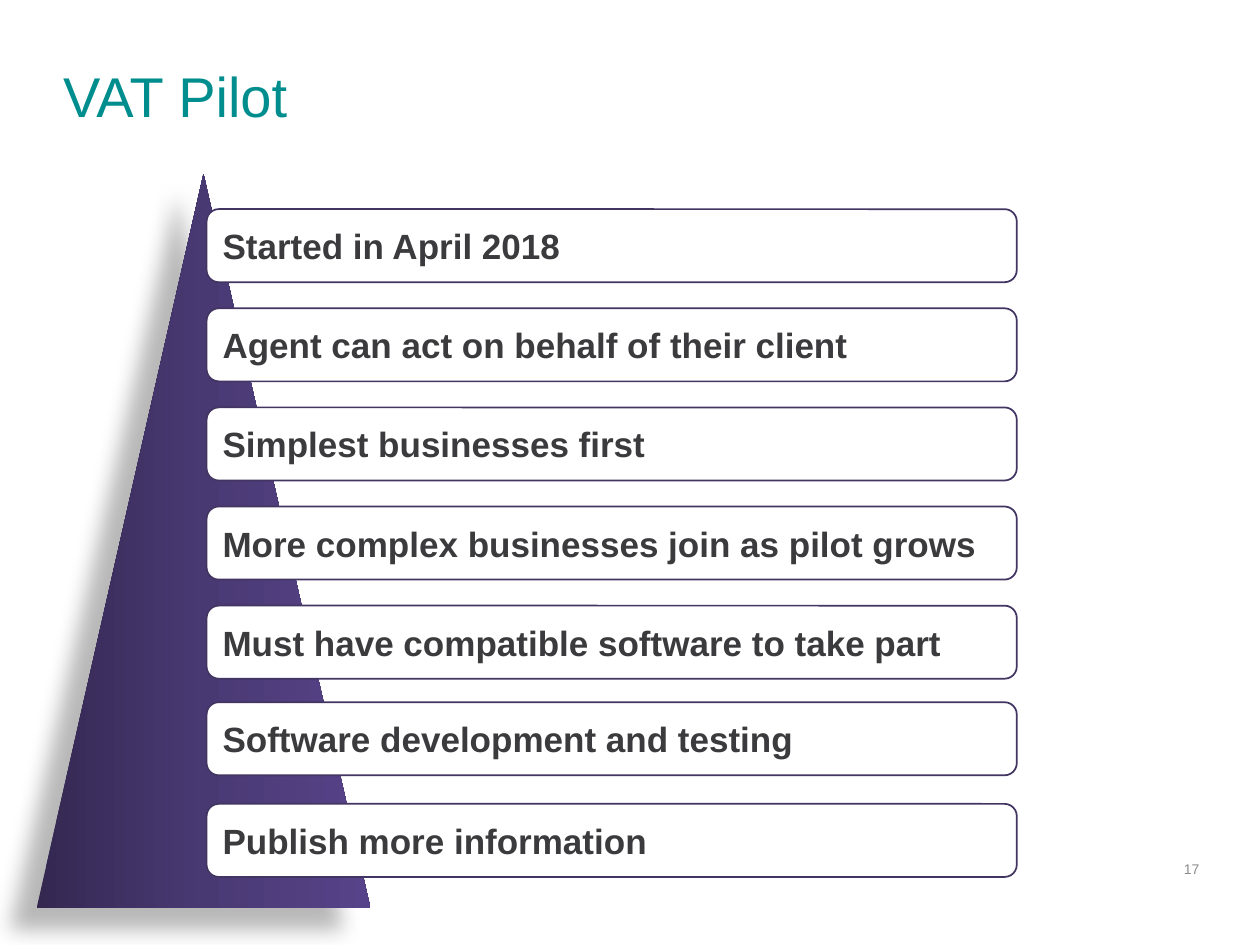
import dataclasses

import lxml.etree
import pptx
import pptx.dml.color
import pptx.enum.shapes
import pptx.enum.text
import pptx.oxml
import pptx.oxml.ns
import pptx.util

SLIDE_WIDTH, SLIDE_HEIGHT = 10, 7.5
FONT = "Arial"
COLOURS = {
    "title": "008D8E",
    "text": "3B3A3D",
    "number": "8C8C8C",
    "outline": "423562",
    "panel": "FFFFFF",
    "shadow": "000000",
}
PYRAMID_STOPS = {0: "342851", 50: "493973", 100: "574389"}

ROW_LEFT, ROW_TOP = 1.64, 1.66
ROW_WIDTH, ROW_HEIGHT = 6.43, 0.58
ROW_PITCH = (6.38 - ROW_TOP) / 6


@dataclasses.dataclass(frozen=True)
class Area:
    left: float
    top: float
    width: float
    height: float

    def lengths(self) -> list:
        return [pptx.util.Inches(value) for value in dataclasses.astuple(self)]


@dataclasses.dataclass(frozen=True)
class Step:
    text: str
    nudge: float = 0


STEPS = [
    Step("Started in April 2018"),
    Step("Agent can act on behalf of their client"),
    Step("Simplest businesses first"),
    Step("More complex businesses join as pilot grows"),
    Step("Must have compatible software to take part"),
    Step("Software development and testing", nudge=-0.02),
    Step("Publish more information"),
]


def colour(name: str) -> pptx.dml.color.RGBColor:
    return pptx.dml.color.RGBColor.from_string(COLOURS[name])


def write(box, text: str, size: float, ink: str, bold: bool = False,
          align=pptx.enum.text.PP_ALIGN.LEFT,
          anchor=pptx.enum.text.MSO_ANCHOR.MIDDLE,
          margins: tuple = (0, 0)):
    """Put one formatted run in the box; margins are side and top/bottom inches."""
    frame = box.text_frame
    frame.word_wrap = True
    frame.vertical_anchor = anchor
    frame.margin_left = frame.margin_right = pptx.util.Inches(margins[0])
    frame.margin_top = frame.margin_bottom = pptx.util.Inches(margins[1])
    para = frame.paragraphs[0]
    para.alignment = align
    span = para.add_run()
    span.text = text
    span.font.name = FONT
    span.font.size = pptx.util.Pt(size)
    span.font.bold = bold
    span.font.color.rgb = colour(ink)
    return para


def add_title(slide) -> None:
    title = slide.shapes.title
    title.left, title.top, title.width, title.height = Area(0.5, 0.29, 9, 1.11).lengths()
    para = write(title, "VAT Pilot", 32, "title")
    para.line_spacing = pptx.util.Pt(24.9)


def add_page_number(slide) -> None:
    box = slide.shapes.add_textbox(*Area(4.96, 6.83, 4.56, 0.13).lengths())
    write(box, "17", 8, "number", align=pptx.enum.text.PP_ALIGN.RIGHT,
          anchor=pptx.enum.text.MSO_ANCHOR.TOP)


def add_pyramid(slide) -> None:
    """Draw the triangle with a three-stop gradient and a soft shadow."""
    pyramid = slide.shapes.add_shape(
        pptx.enum.shapes.MSO_SHAPE.ISOSCELES_TRIANGLE,
        *Area(0.29, 1.38, 2.65, 5.83).lengths())
    pyramid.line.fill.background()
    pyramid.fill.gradient()
    pyramid.fill.gradient_angle = 0
    qn = pptx.oxml.ns.qn
    properties = pyramid.element.spPr
    stops = properties.find(f".//{qn('a:gsLst')}")
    for stop in list(stops):
        stops.remove(stop)
    for percent, value in PYRAMID_STOPS.items():
        stop = lxml.etree.SubElement(stops, qn("a:gs"), pos=str(percent * 1000))
        lxml.etree.SubElement(stop, qn("a:srgbClr"), val=value)

    pyramid.shadow.inherit = False
    shadow = lxml.etree.SubElement(
        properties.find(qn("a:effectLst")), qn("a:outerShdw"),
        blurRad=str(pptx.util.Pt(11.8)), dist=str(pptx.util.Pt(19.7)),
        dir=str(141 * 60000), rotWithShape="0")
    tint = lxml.etree.SubElement(shadow, qn("a:srgbClr"), val=COLOURS["shadow"])
    lxml.etree.SubElement(tint, qn("a:alpha"), val="28000")


def add_step(slide, row: int, step: Step) -> None:
    area = Area(ROW_LEFT, ROW_TOP + row * ROW_PITCH + step.nudge, ROW_WIDTH, ROW_HEIGHT)
    panel = slide.shapes.add_shape(
        pptx.enum.shapes.MSO_SHAPE.ROUNDED_RECTANGLE, *area.lengths())
    panel.shadow.inherit = False
    panel.fill.solid()
    panel.fill.fore_color.rgb = colour("panel")
    panel.line.color.rgb = colour("outline")
    panel.line.width = pptx.util.Pt(1)
    write(panel, step.text, 20, "text", bold=True, margins=(0.1, 0.05))


def main() -> None:
    deck = pptx.Presentation()
    deck.slide_width = pptx.util.Inches(SLIDE_WIDTH)
    deck.slide_height = pptx.util.Inches(SLIDE_HEIGHT)
    slide = deck.slides.add_slide(deck.slide_layouts.get_by_name("Title Only"))
    add_title(slide)
    add_page_number(slide)
    add_pyramid(slide)
    for row, step in enumerate(STEPS):
        add_step(slide, row, step)
    deck.save("out.pptx")


if __name__ == "__main__":
    main()
